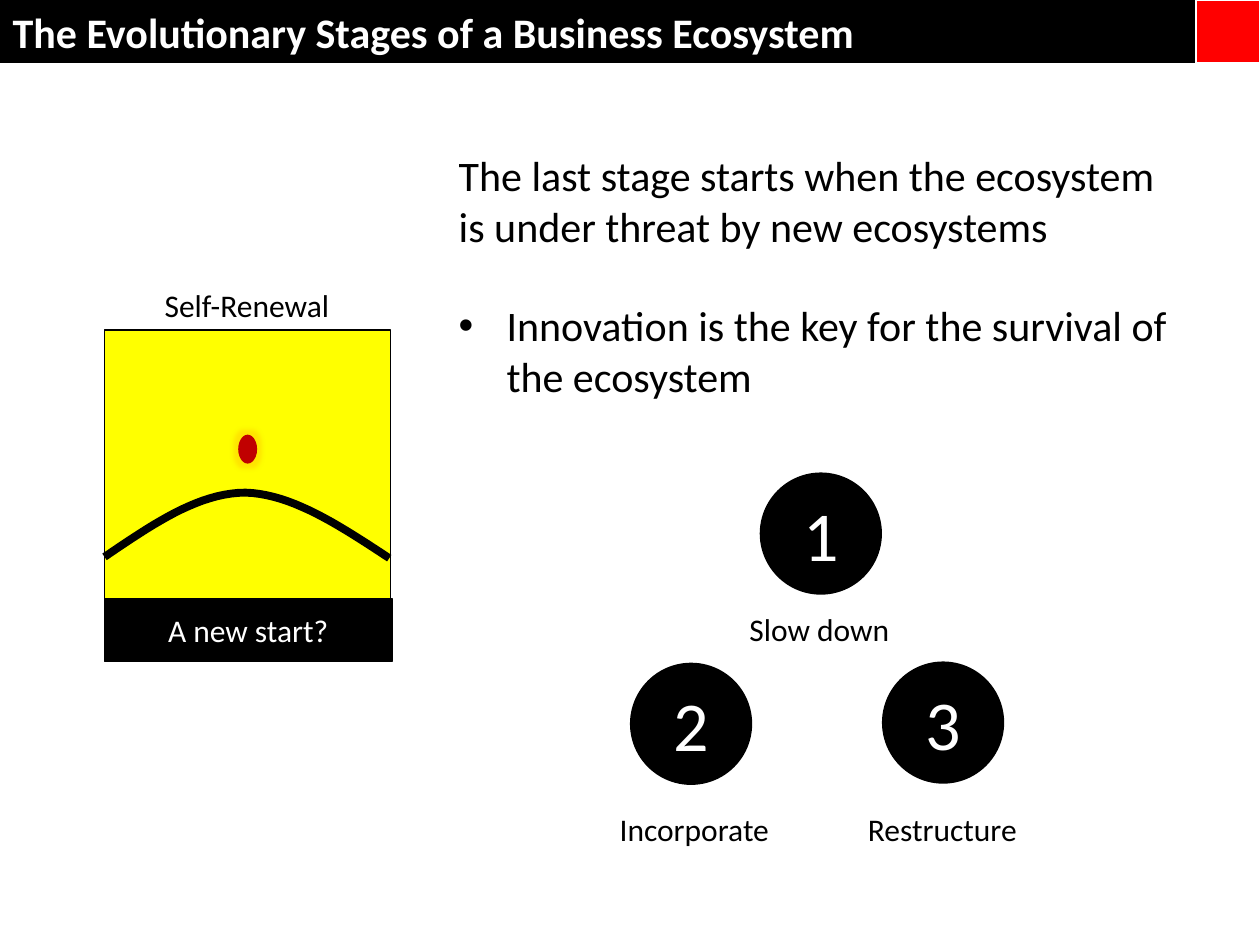
from lxml import etree
from pptx import Presentation
from pptx.dml.color import RGBColor
from pptx.enum.shapes import MSO_SHAPE as SHAPE
from pptx.enum.text import MSO_ANCHOR as ANCHOR, MSO_AUTO_SIZE as AUTO, PP_ALIGN as ALIGN
from pptx.oxml.ns import qn
from pptx.util import Inches, Pt

C = {"black": "000000", "white": "FFFFFF", "red": "FF0000",
     "yellow": "FFFF00", "ball": "C00000", "glow": "FFC000"}


def rgb(name):
    return RGBColor.from_string(C[name])


def write(sp, text, size=18, color="black", bold=False, align=ALIGN.CENTER,
          anchor=ANCHOR.TOP, wrap=True, new=False):
    tf = sp.text_frame
    tf.word_wrap, tf.vertical_anchor, tf.auto_size = wrap, anchor, AUTO.NONE
    p = tf.add_paragraph() if new else tf.paragraphs[0]
    p.alignment, p.space_before = align, Pt(0)
    r = p.add_run()
    r.text = text
    r.font.name, r.font.size, r.font.bold = "Calibri", Pt(size), bold
    r.font.color.rgb = rgb(color)
    return p


def shape(kind, x, y, w, h, fill, line=None):
    sp = s.shapes.add_shape(kind, Inches(x), Inches(y), Inches(w), Inches(h))
    sp.shadow.inherit = False
    sp.fill.solid()
    sp.fill.fore_color.rgb = rgb(fill)
    if line:
        sp.line.color.rgb, sp.line.width = rgb(line), Pt(1)
    else:
        sp.line.fill.background()
    return sp


prs = Presentation()
prs.slide_width, prs.slide_height = Inches(10), Inches(7.5)
s = prs.slides.add_slide(prs.slide_layouts[1])
title, body = s.shapes.title, s.placeholders[1]

# Title bar with red corner
title.left, title.top, title.width, title.height = 0, 0, Inches(10), Inches(0.5)
title.fill.solid()
title.fill.fore_color.rgb = rgb("black")
write(title, "The Evolutionary Stages of a Business Ecosystem", 24, "white", True, ALIGN.LEFT)
shape(SHAPE.RECTANGLE, 9.49, 0, 0.51, 0.5, "red", "white")

# Explanation: a plain paragraph, then a bullet
body.left, body.top, body.width, body.height = Inches(3.54), Inches(1.14), Inches(5.95), Inches(2.11)
intro = write(body, "The last stage starts when the ecosystem is under threat by new ecosystems",
              24, align=ALIGN.LEFT)
point = write(body, "Innovation is the key for the survival of the ecosystem",
              24, align=ALIGN.LEFT, new=True)
point.space_before = Pt(28)
for p, indent, bullet in [(intro, 0, None), (point, 0.38, "•")]:
    pPr = p._p.get_or_add_pPr()
    pPr.set("marL", str(Inches(indent)))
    pPr.set("indent", str(-Inches(indent)))
    if bullet:
        etree.SubElement(pPr, qn("a:buFont"), typeface="Arial")
        etree.SubElement(pPr, qn("a:buChar"), char=bullet)
    else:
        etree.SubElement(pPr, qn("a:buNone"))

# Self-renewal panel
shape(SHAPE.RECTANGLE, 0.83, 2.62, 2.27, 2.13, "yellow", "black")
footer = shape(SHAPE.RECTANGLE, 0.83, 4.75, 2.28, 0.5, "black", "black")
write(footer, "A new start?", color="white", anchor=ANCHOR.MIDDLE)

# Hill: two Bezier segments sampled into short lines
hill = [[(0.83, 4.42), (1.2, 4.17), (1.57, 3.91), (1.95, 3.91)],
        [(1.95, 3.91), (2.32, 3.92), (2.71, 4.18), (3.09, 4.43)]]
steps = 20
points = []
for a, b, c, d in hill:
    for i in range(1, steps + 1):
        t = i / steps
        u = 1 - t
        points.append([Inches(u**3 * a[k] + 3 * u*u*t * b[k] + 3 * u*t*t * c[k] + t**3 * d[k])
                       for k in (0, 1)])
builder = s.shapes.build_freeform(Inches(0.83), Inches(4.42))
builder.add_line_segments(points, close=False)
curve = builder.convert_to_shape()
curve.shadow.inherit = False
curve.fill.background()
curve.line.color.rgb, curve.line.width = rgb("black"), Pt(4.5)

# Glowing ball above the hill
ball = shape(SHAPE.OVAL, 1.85, 3.49, 0.23, 0.15, "ball")
ball.rotation = 90
effects = ball._element.spPr.find(qn("a:effectLst"))
glow = etree.SubElement(effects, qn("a:glow"), rad=str(Pt(5)))
color = etree.SubElement(glow, qn("a:srgbClr"), val=C["glow"])
etree.SubElement(color, qn("a:alpha"), val="40000")

# Numbered steps
for number, x, y in [("1", 6.03, 3.75), ("2", 5, 5.26), ("3", 7, 5.25)]:
    circle = shape(SHAPE.OVAL, x, y, 0.97, 0.97, "black")
    write(circle, number, 40, "white", anchor=ANCHOR.MIDDLE)

# Captions
for text, x, y, w, wrap, align in [
        ("Self-Renewal", 0.83, 2.22, 2.26, True, ALIGN.CENTER),
        ("Slow down", 5.85, 4.79, 1.33, False, ALIGN.LEFT),
        ("Incorporate", 4.82, 6.38, 1.4, False, ALIGN.LEFT),
        ("Restructure", 6.79, 6.38, 1.4, False, ALIGN.LEFT)]:
    box = s.shapes.add_textbox(Inches(x), Inches(y), Inches(w), Inches(0.4))
    write(box, text, wrap=wrap, align=align)

prs.save("out.pptx")
